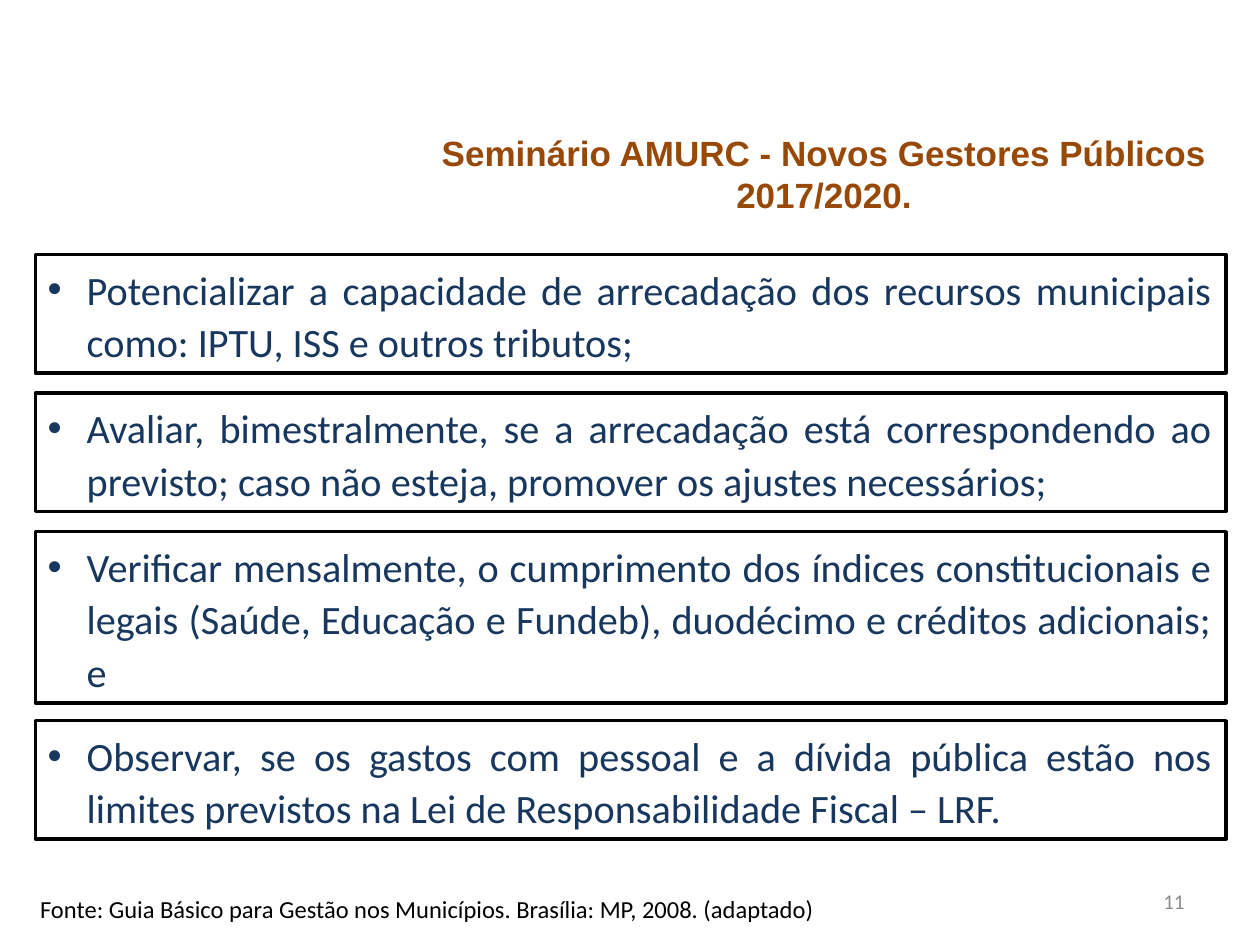
from pptx import Presentation
from pptx.dml.color import RGBColor
from pptx.enum.shapes import MSO_SHAPE
from pptx.enum.text import MSO_ANCHOR, MSO_AUTO_SIZE, PP_ALIGN
from pptx.oxml.ns import qn
from pptx.util import Pt
from lxml import etree

PX = 9144  # EMU in one px, 100 px to the inch
WHITE = RGBColor(0xFF, 0xFF, 0xFF)
BLACK = RGBColor(0x00, 0x00, 0x00)
BROWN = RGBColor(0x98, 0x48, 0x07)
NAVY = RGBColor(0x17, 0x37, 0x5E)
GRAY = RGBColor(0x8C, 0x8C, 0x8C)


class Page:
    """Holds the style and the current slide."""
    font = "Calibri"
    indent = 31

    def __init__(self, deck):
        self.slide = deck.slides.add_slide(deck.slide_layouts[5])

    def put_text(self, shape, text, size, color, align=PP_ALIGN.LEFT,
                 anchor=MSO_ANCHOR.TOP, font=None, bold=False):
        frame = shape.text_frame
        frame.word_wrap = True
        frame.auto_size = MSO_AUTO_SIZE.NONE
        frame.vertical_anchor = anchor
        para = frame.paragraphs[0]
        para.alignment = align
        run = para.add_run()
        run.text = text
        run.font.name = font or self.font
        run.font.size = Pt(size)
        run.font.bold = bold
        run.font.color.rgb = color
        return para

    def title(self, text, x, y, w, h):
        shape = self.slide.shapes.title
        shape.left, shape.top, shape.width, shape.height = (
            n * PX for n in (x, y, w, h))
        self.put_text(shape, text, 20, BROWN, PP_ALIGN.CENTER,
                      font="Arial", bold=True)

    def label(self, text, x, y, w, h, size, color, **style):
        shape = self.slide.shapes.add_textbox(*(n * PX for n in (x, y, w, h)))
        self.put_text(shape, text, size, color, **style)

    def box(self, text, x, y, w, h):
        shape = self.slide.shapes.add_shape(
            MSO_SHAPE.RECTANGLE, *(n * PX for n in (x, y, w, h)))
        shape.shadow.inherit = False
        shape.fill.solid()
        shape.fill.fore_color.rgb = WHITE
        shape.line.color.rgb = BLACK
        shape.line.width = Pt(2)
        para = self.put_text(shape, text, 23, NAVY, PP_ALIGN.JUSTIFY)
        para.line_spacing = Pt(30)
        self.bullet(para)

    def bullet(self, para):
        props = para._p.get_or_add_pPr()
        props.set("marL", str(self.indent * PX))
        props.set("indent", str(-self.indent * PX))
        etree.SubElement(props, qn("a:buFont"), typeface="Arial")
        etree.SubElement(props, qn("a:buChar"), char="•")


# Each task with its top and height
TASKS = [
    ("Potencializar a capacidade de arrecadação dos recursos municipais "
     "como: IPTU, ISS e outros tributos;", 202, 94),
    ("Avaliar, bimestralmente, se a arrecadação está correspondendo ao "
     "previsto; caso não esteja, promover os ajustes necessários;", 312, 94),
    ("Verificar mensalmente, o cumprimento dos índices constitucionais e "
     "legais (Saúde, Educação e Fundeb), duodécimo e créditos adicionais; e",
     422, 136),
    ("Observar, se os gastos com pessoal e a dívida pública estão nos "
     "limites previstos na Lei de Responsabilidade Fiscal – LRF.", 572, 94),
]


def main():
    deck = Presentation()
    deck.slide_width, deck.slide_height = 1000 * PX, 750 * PX
    page = Page(deck)

    # Heading
    page.title("Seminário AMURC - Novos Gestores Públicos 2017/2020.",
               335, 99, 638, 77)

    # Boxed tasks
    for text, top, height in TASKS:
        page.box(text, 28, top, 945, height)

    # Source and page number
    page.label("Fonte: Guia Básico para Gestão nos Municípios. "
               "Brasília: MP, 2008. (adaptado)", 22, 705, 714, 34, 14, BLACK)
    page.label("11", 717, 695, 233, 40, 12, GRAY,
               align=PP_ALIGN.RIGHT, anchor=MSO_ANCHOR.MIDDLE)

    deck.save("out.pptx")


if __name__ == "__main__":
    main()
